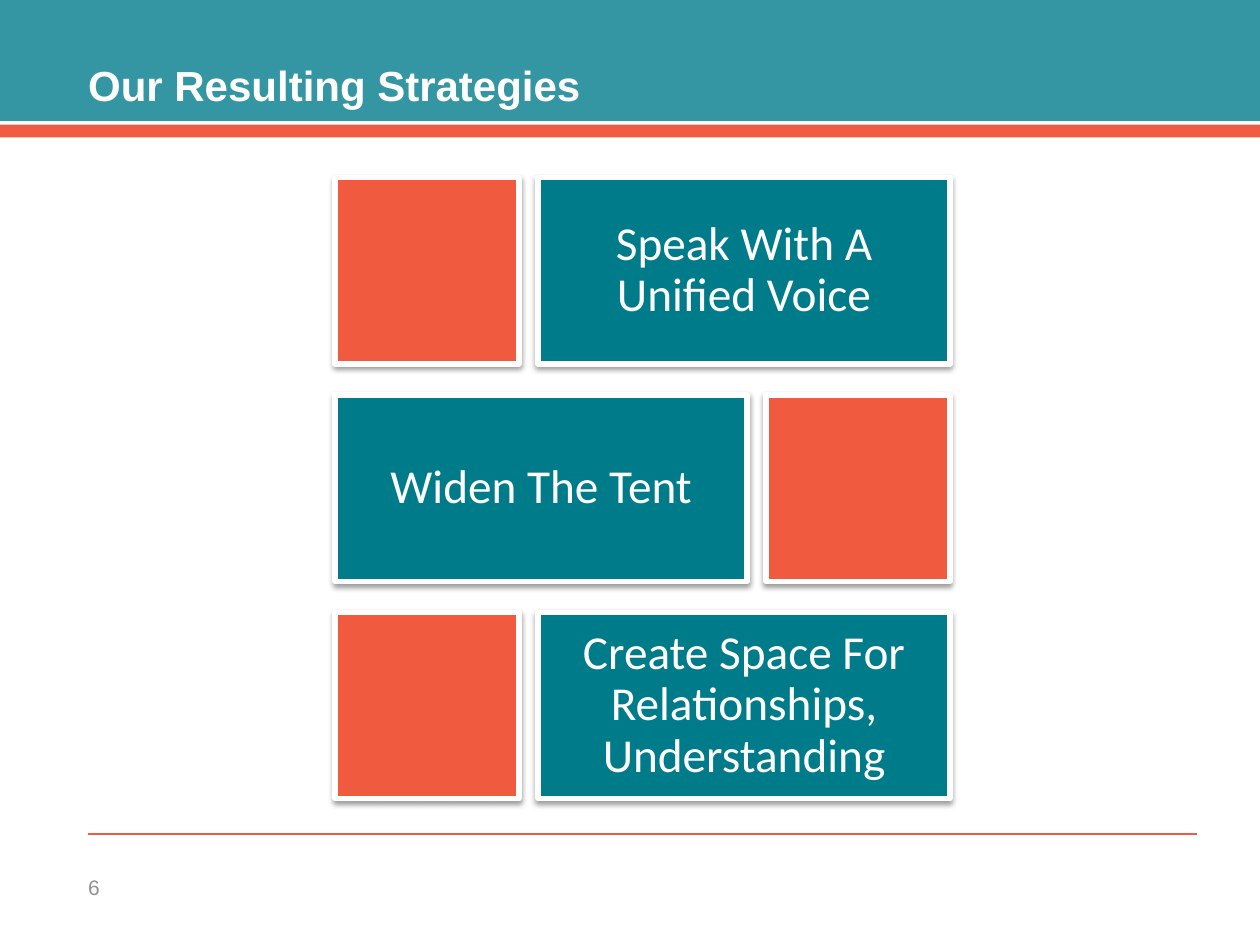
from dataclasses import dataclass

from lxml import etree
from pptx import Presentation
from pptx.dml.color import RGBColor
from pptx.enum.shapes import MSO_CONNECTOR, MSO_SHAPE
from pptx.enum.text import MSO_ANCHOR, PP_ALIGN
from pptx.oxml import parse_xml
from pptx.oxml.ns import nsdecls, qn
from pptx.util import Inches, Pt

RECT = MSO_SHAPE.RECTANGLE
STRAIGHT = MSO_CONNECTOR.STRAIGHT
MIDDLE = MSO_ANCHOR.MIDDLE
LEFT, CENTER = PP_ALIGN.LEFT, PP_ALIGN.CENTER


@dataclass(frozen=True)
class Theme:
    band: str = "007C8B"
    teal: str = "007B8A"
    coral: str = "F05B40"
    stripe: str = "F15B40"
    white: str = "FFFFFF"
    gray: str = "919191"
    head: str = "Arial"
    body: str = "Calibri"
    title: int = 24
    label: int = 27
    small: int = 12


THEME = Theme()
ROWS = ["Speak With A Unified Voice", "Widen The Tent",
        "Create Space For Relationships, Understanding"]
GRID_LEFT, GRID_TOP, GRID_WIDTH = 2.66, 1.41, 4.88
WIDE, NARROW, TALL, STEP = 3.27, 1.46, 1.48, 1.725


def rgb(code):
    return RGBColor.from_string(code)


def write(shape, text, font=THEME.head, size=THEME.small, color=THEME.white,
          bold=False, align=LEFT, inset=0, spacing=None):
    frame = shape.text_frame
    frame.word_wrap = True
    frame.vertical_anchor = MIDDLE
    frame.margin_left = frame.margin_right = Inches(inset)
    frame.margin_top = frame.margin_bottom = Inches(inset)
    para = frame.paragraphs[0]
    para.alignment = align
    para.line_spacing = spacing
    run = para.add_run()
    run.text = text
    run.font.name = font
    run.font.size = Pt(size)
    run.font.bold = bold
    run.font.color.rgb = rgb(color)


def add_text(slide, box, text, **form):
    write(slide.shapes.add_textbox(*map(Inches, box)), text, **form)


def add_rect(slide, box, fill, alpha=None):
    shape = slide.shapes.add_shape(RECT, *map(Inches, box))
    shape.shadow.inherit = False
    shape.fill.solid()
    shape.fill.fore_color.rgb = rgb(fill)
    shape.line.fill.background()
    if alpha:
        color = shape.fill._xPr.find(".//" + qn("a:srgbClr"))
        etree.SubElement(color, qn("a:alpha")).set("val", str(alpha * 1000))
    return shape


def add_tile(slide, box, fill):
    """Add a white-edged rectangle with a soft shadow below it."""
    tile = add_rect(slide, box, fill)
    tile.line.color.rgb = rgb(THEME.white)
    tile.line.width = Pt(3)
    effects = tile._element.spPr.find(qn("a:effectLst"))
    effects.append(parse_xml(
        f'<a:outerShdw {nsdecls("a")} blurRad="{Pt(3.1)}" dist="{Pt(1.6)}" '
        'dir="5400000" rotWithShape="0"><a:srgbClr val="000000">'
        '<a:alpha val="38000"/></a:srgbClr></a:outerShdw>'))
    return tile


def add_rule(slide, left, right, top):
    rule = slide.shapes.add_connector(
        STRAIGHT, Inches(left), Inches(top), Inches(right), Inches(top))
    rule.line.color.rgb = rgb(THEME.stripe)
    rule.line.width = Pt(1)
    etree.SubElement(rule._element.spPr, qn("a:effectLst"))


def add_row(slide, index, text):
    """Add a label and a square, with sides swapped on every other row."""
    top = GRID_TOP + index * STEP
    far_wide = GRID_LEFT + GRID_WIDTH - WIDE
    far_narrow = GRID_LEFT + GRID_WIDTH - NARROW
    wide, narrow = ((GRID_LEFT, far_narrow) if index % 2
                    else (far_wide, GRID_LEFT))
    label = add_tile(slide, (wide, top, WIDE, TALL), THEME.teal)
    write(label, text, font=THEME.body, size=THEME.label,
          align=CENTER, inset=0.11, spacing=0.9)
    add_tile(slide, (narrow, top, NARROW, TALL), THEME.coral)


def main():
    deck = Presentation()
    deck.slide_width, deck.slide_height = Inches(10), Inches(7.5)
    slide = deck.slides.add_slide(deck.slide_layouts[6])
    add_rect(slide, (0, 0, 10, 0.96), THEME.band, alpha=80)
    add_rect(slide, (0, 0.99, 10, 0.1), THEME.stripe)
    add_rule(slide, 0.7, 9.5, 6.62)
    add_text(slide, (0.7, 0.43, 8.8, 0.48), "Our Resulting Strategies",
             size=THEME.title, bold=True)
    add_text(slide, (0.7, 6.84, 0.5, 0.4), "6", color=THEME.gray)
    for index, text in enumerate(ROWS):
        add_row(slide, index, text)
    deck.save("out.pptx")


if __name__ == "__main__":
    main()
